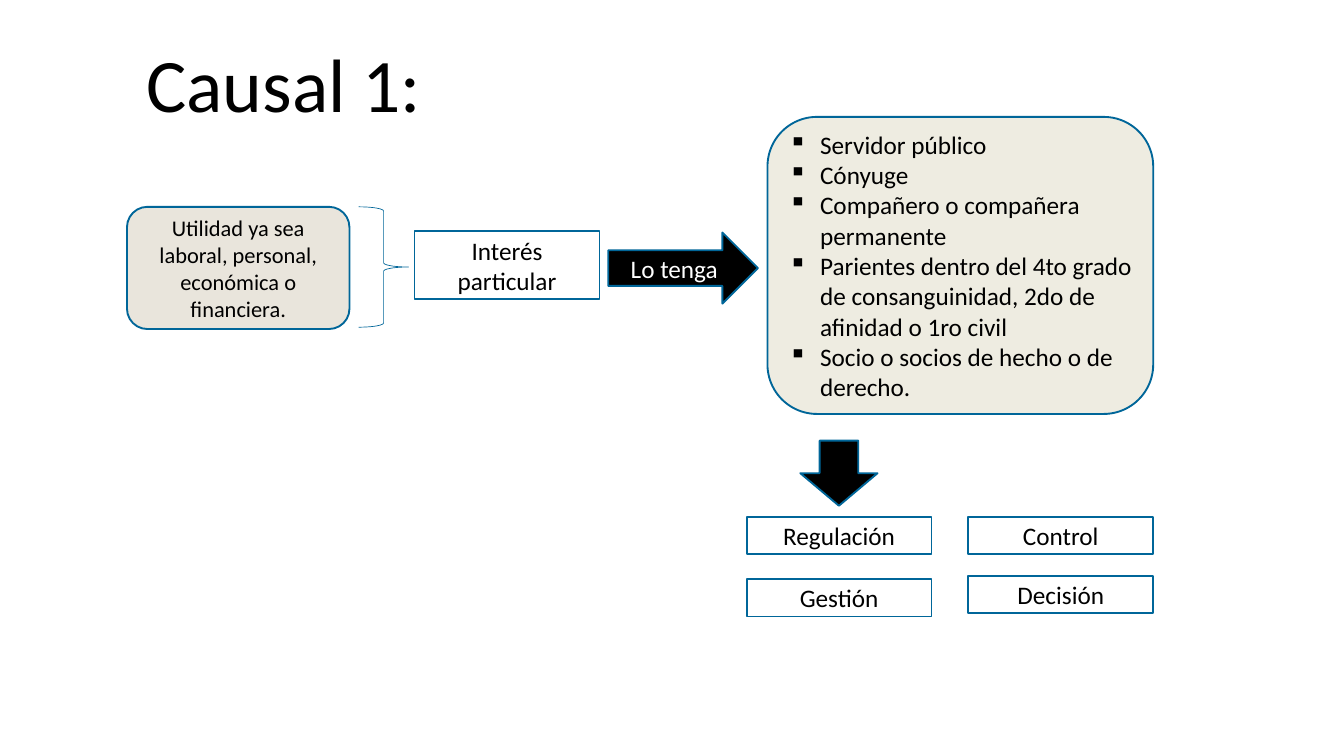
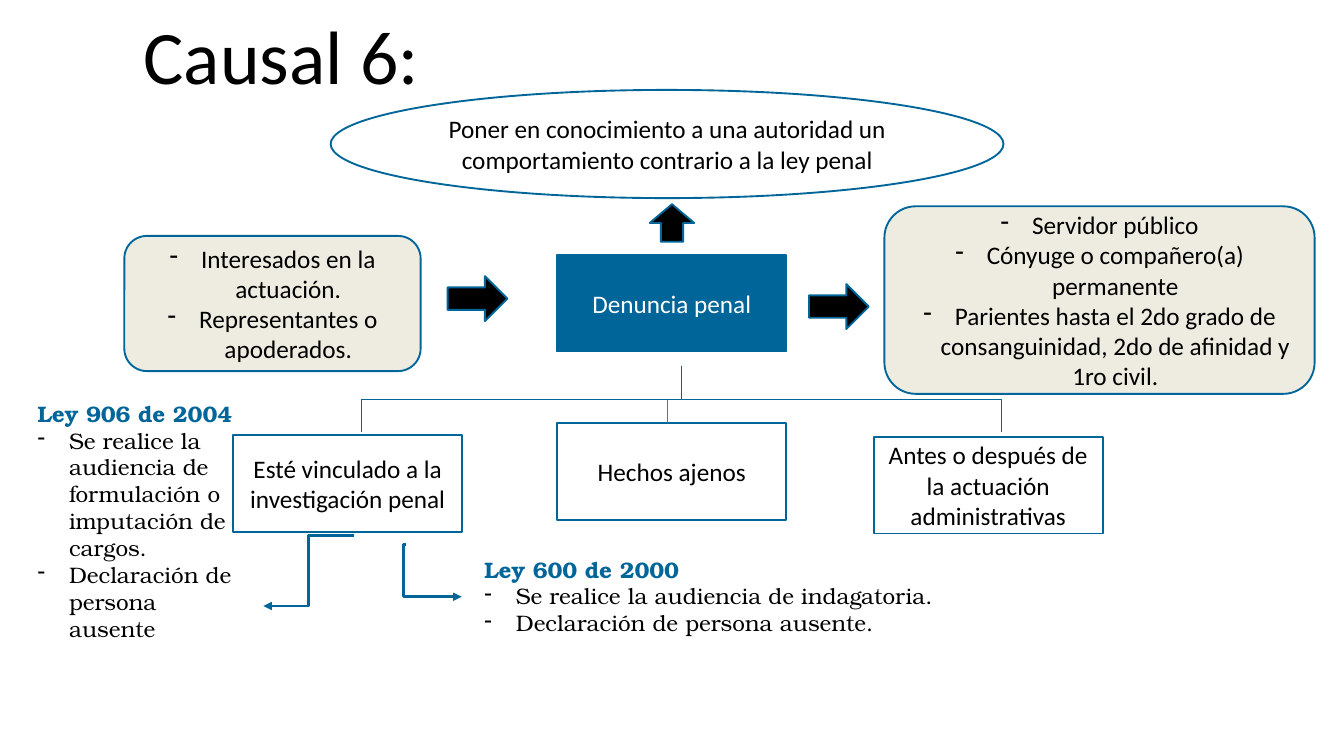
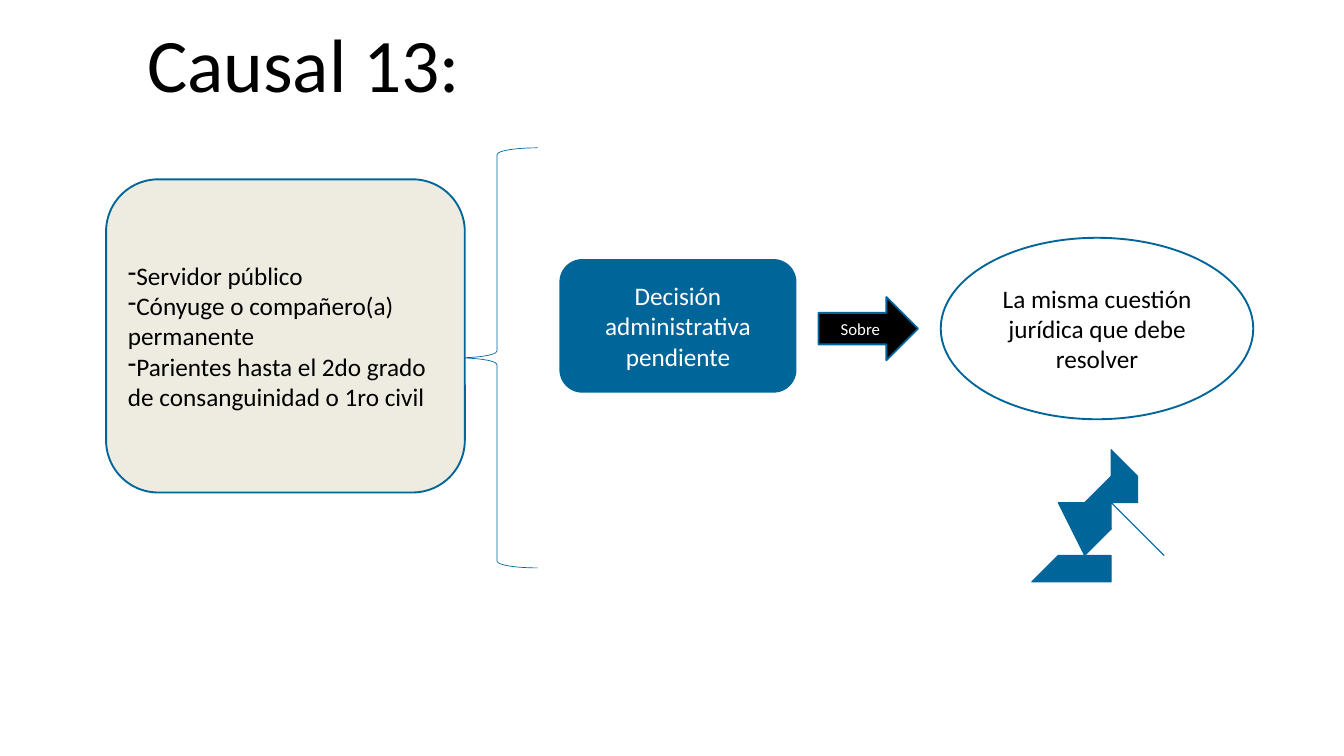
from lxml.etree import SubElement
from pptx import Presentation
from pptx.dml.color import RGBColor
from pptx.enum.shapes import MSO_CONNECTOR as LINK, MSO_SHAPE as SHAPE
from pptx.enum.text import MSO_ANCHOR as ANCHOR, PP_ALIGN as ALIGN
from pptx.oxml.ns import qn
from pptx.util import Cm, Pt

BLUE = RGBColor(0x00, 0x66, 0x99)
RED = RGBColor(0xBF, 0x4C, 0x48)
CREAM = RGBColor(0xEE, 0xEC, 0xE1)
SAND = RGBColor(0xE9, 0xE5, 0xDC)
BLACK = RGBColor(0x00, 0x00, 0x00)
WHITE = RGBColor(0xFF, 0xFF, 0xFF)
SANS, SERIF = "Calibri", "TeX Gyre Bonum"
HANG = 1.19


def write(sp, text, size=27, color=BLACK, font=SANS, align=ALIGN.CENTER,
          bullet=None, indent=HANG, heading=False, anchor=ANCHOR.MIDDLE):
    """Fill sp with one paragraph per line; a heading is bold, blue and unbulleted."""
    tf = sp.text_frame
    tf.word_wrap = True
    tf.vertical_anchor = anchor
    for i, line in enumerate(text.split("\n")):
        p = tf.add_paragraph() if i else tf.paragraphs[0]
        p.alignment = align
        is_heading = heading and i == 0
        if bullet and not is_heading:
            pPr = p._p.get_or_add_pPr()
            pPr.set("marL", str(Cm(indent)))
            pPr.set("indent", str(-Cm(indent)))
            SubElement(pPr, qn("a:buChar"), char=bullet)
        r = p.add_run()
        r.text = line
        r.font.name, r.font.size = font, Pt(size)
        r.font.bold = is_heading
        r.font.color.rgb = BLUE if is_heading else color


def add_box(slide, kind, x, y, w, h, fill=None, width=2):
    """Add a blue-outlined preset shape, unfilled unless a fill is given."""
    sp = slide.shapes.add_shape(kind, Cm(x), Cm(y), Cm(w), Cm(h))
    sp.shadow.inherit = False
    if fill is None:
        sp.fill.background()
    else:
        sp.fill.solid()
        sp.fill.fore_color.rgb = fill
    sp.line.color.rgb = BLUE
    sp.line.width = Pt(width)
    return sp


prs = Presentation()
prs.slide_width, prs.slide_height = Cm(50.8), Cm(28.58)

slides = []
for title, x, y in [("Causal 1:", 5.28, 1.27), ("Causal 6:", 5.18, 0.23),
                    ("Causal 13:", 5.31, 0.53)]:
    s = prs.slides.add_slide(prs.slide_layouts[6])
    sp = s.shapes.add_textbox(Cm(x), Cm(y), Cm(25.43), Cm(3.71))
    write(sp, title, size=81, align=ALIGN.LEFT, anchor=ANCHOR.TOP)
    slides.append(s)
causal_1, causal_6, causal_13 = slides

# Causal 1: who holds the private interest, and in which functions
for text, x, y, w, h in [
    ("Interés particular", 15.67, 8.74, 6.99, 2.57),
    ("Regulación", 28.22, 19.53, 6.99, 1.42),
    ("Gestión", 28.22, 21.89, 6.99, 1.42),
    ("Control", 36.6, 19.53, 6.99, 1.42),
    ("Decisión", 36.6, 21.77, 6.99, 1.42),
]:
    write(add_box(causal_1, SHAPE.RECTANGLE, x, y, w, h, WHITE), text)

sp = add_box(causal_1, SHAPE.RIGHT_ARROW, 22.99, 8.79, 5.66, 2.69, BLACK)
write(sp, "Lo tenga", color=WHITE)
add_box(causal_1, SHAPE.DOWN_ARROW, 30.25, 16.66, 2.92, 2.46, BLACK)
sp = add_box(causal_1, SHAPE.ROUNDED_RECTANGLE, 29.01, 4.42, 14.58, 11.23, CREAM)
write(sp, "Servidor público\nCónyuge\nCompañero o compañera permanente\n"
          "Parientes dentro del 4to grado de consanguinidad, 2do de afinidad o 1ro civil\n"
          "Socio o socios de hecho o de derecho.", align=ALIGN.LEFT, bullet="▪")
add_box(causal_1, SHAPE.RIGHT_BRACE, 13.56, 7.82, 1.88, 4.55, width=0.75)
sp = add_box(causal_1, SHAPE.ROUNDED_RECTANGLE, 4.8, 7.82, 8.41, 4.62, SAND)
write(sp, "Utilidad ya sea laboral, personal, económica o financiera.", size=24)

# Causal 6: the criminal complaint and its conditions
brace = add_box(causal_6, SHAPE.LEFT_BRACE, 24.51, 3, 2.51, 24.18, width=0.75)
brace.rotation = 90
brace.adjustments[0], brace.adjustments[1] = 0, 0.501

for text, x, y, fill, color in [
    ("Esté vinculado a la investigación penal", 8.81, 16.46, WHITE, BLACK),
    ("Antes o después de la actuación administrativas", 33.02, 16.51, WHITE, BLACK),
    ("Hechos ajenos", 21.06, 16, WHITE, BLACK),
    ("Denuncia penal", 21.06, 9.63, BLUE, WHITE),
]:
    sp = add_box(causal_6, SHAPE.RECTANGLE, x, y, 8.66, 3.66, fill)
    write(sp, text, color=color)

for text, x, y, w, h in [
    ("Interesados en la actuación.\nRepresentantes o apoderados.", 4.7, 8.92, 11.2, 5.11),
    ("Servidor público\nCónyuge o compañero(a) permanente\n"
     "Parientes hasta el 2do grado de consanguinidad, 2do de afinidad y 1ro civil.",
     33.43, 7.8, 16.26, 7.09),
]:
    sp = add_box(causal_6, SHAPE.ROUNDED_RECTANGLE, x, y, w, h, CREAM)
    write(sp, text, bullet="-")

for kind, x, y, w, h in [(SHAPE.RIGHT_ARROW, 30.58, 10.74, 2.26, 1.7),
                         (SHAPE.RIGHT_ARROW, 16.92, 10.44, 2.26, 1.7),
                         (SHAPE.UP_ARROW, 24.56, 7.72, 1.68, 1.42)]:
    add_box(causal_6, kind, x, y, w, h, BLACK)

sp = add_box(causal_6, SHAPE.OVAL, 12.5, 3.4, 25.43, 4.09, WHITE)
write(sp, "Poner en conocimiento a una autoridad un comportamiento contrario a la ley penal")

for kind, x1, y1, x2, y2, color, width, bend in [
    (LINK.STRAIGHT, 25.22, 16, 25.22, 15.11, RED, 0.75, None),
    (LINK.ELBOW, 15.34, 20.6, 17.45, 22.56, BLUE, 3, -4400),
    (LINK.ELBOW, 13.39, 20.24, 9.96, 22.91, BLUE, 3, 50000),
]:
    link = causal_6.shapes.add_connector(kind, Cm(x1), Cm(y1), Cm(x2), Cm(y2))
    link.line.color.rgb = color
    link.line.width = Pt(width)
    spPr = link._element.spPr
    if bend is not None:
        guides = spPr.find(qn("a:prstGeom")).find(qn("a:avLst"))
        SubElement(guides, qn("a:gd"), name="adj1", fmla=f"val {bend}")
        SubElement(spPr.find(qn("a:ln")), qn("a:tailEnd"), type="triangle")
    SubElement(spPr, qn("a:effectLst"))

for text, x, y, w, h in [
    ("Ley 600 de 2000\nSe realice la audiencia de indagatoria.\n"
     "Declaración de persona ausente.", 18.06, 20.88, 24.18, 4.5),
    ("Ley 906 de 2004\nSe realice la audiencia de formulación o imputación de cargos.\n"
     "Declaración de persona ausente", 1.17, 14.99, 8.51, 10.64),
]:
    sp = causal_6.shapes.add_textbox(Cm(x), Cm(y), Cm(w), Cm(h))
    write(sp, text, size=24, font=SERIF, align=ALIGN.LEFT, bullet="-",
          heading=True, anchor=ANCHOR.TOP)

# Causal 13: pending decision on the same legal question
add_box(causal_13, SHAPE.LEFT_BRACE, 17.25, 5.59, 3.07, 15.88, width=0.75)
sp = add_box(causal_13, SHAPE.RIGHT_ARROW, 30.94, 11.23, 3.76, 2.39, BLACK)
write(sp, "Sobre", size=18, color=WHITE)
sp = add_box(causal_13, SHAPE.ROUNDED_RECTANGLE, 4.01, 6.78, 13.56, 11.84, CREAM)
write(sp, "Servidor público\nCónyuge o compañero(a) permanente\n"
          "Parientes hasta el 2do grado de consanguinidad o 1ro civil",
      align=ALIGN.LEFT, bullet="-", indent=0)
sp = add_box(causal_13, SHAPE.ROUNDED_RECTANGLE, 21.18, 9.83, 8.89, 4.98, BLUE)
write(sp, "Decisión administrativa pendiente", color=WHITE)
sp = add_box(causal_13, SHAPE.OVAL, 35.56, 8.99, 11.81, 6.86, WHITE)
write(sp, "La misma cuestión jurídica que debe resolver")

gavel_base = [(41.53, 21.46), (41.4, 21.46), (41.4, 21.23), (39.75, 21.23),
              (39.75, 21.46), (39.62, 21.46), (39.46, 21.53), (39.39, 21.72),
              (39.46, 21.88), (39.62, 21.95), (41.53, 21.95), (41.7, 21.88),
              (41.77, 21.72), (41.7, 21.53)]
gavel_lower_cap = [(41.53, 20.29), (41.59, 20.17), (41.53, 20.04), (40.59, 19.1),
                   (40.46, 19.04), (40.34, 19.1), (40.11, 19.33), (41.3, 20.52)]
gavel_upper_cap = [(42.95, 18.62), (43.08, 18.68), (43.21, 18.62), (43.43, 18.39),
                   (42.24, 17.2), (42.01, 17.42), (41.95, 17.55), (42.01, 17.68)]
gavel_handle = [(44.09, 20.7), (42.49, 19.1), (42.85, 18.75), (41.88, 17.81),
                (40.69, 18.97), (41.66, 19.94), (42.14, 19.46), (43.74, 21.06),
                (43.92, 21.13), (44.09, 21.06), (44.17, 20.88)]
for points in (gavel_base, gavel_lower_cap, gavel_upper_cap, gavel_handle):
    outline = causal_13.shapes.build_freeform(*points[0], scale=Cm(1))
    outline.add_line_segments(points[1:], close=True)
    sp = outline.convert_to_shape()
    sp.shadow.inherit = False
    sp.fill.solid()
    sp.fill.fore_color.rgb = BLUE
    sp.line.color.rgb = BLUE
    sp.line.width = Pt(1.12)

prs.save("out.pptx")
